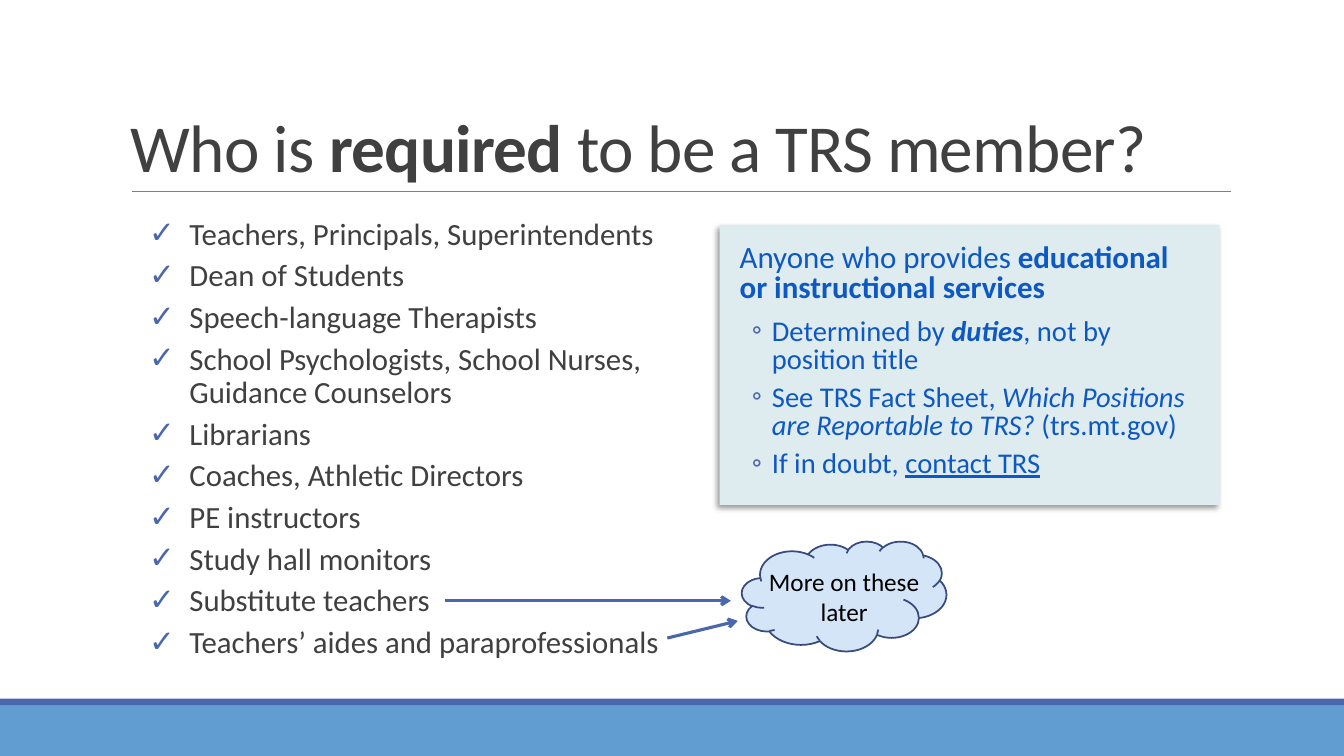
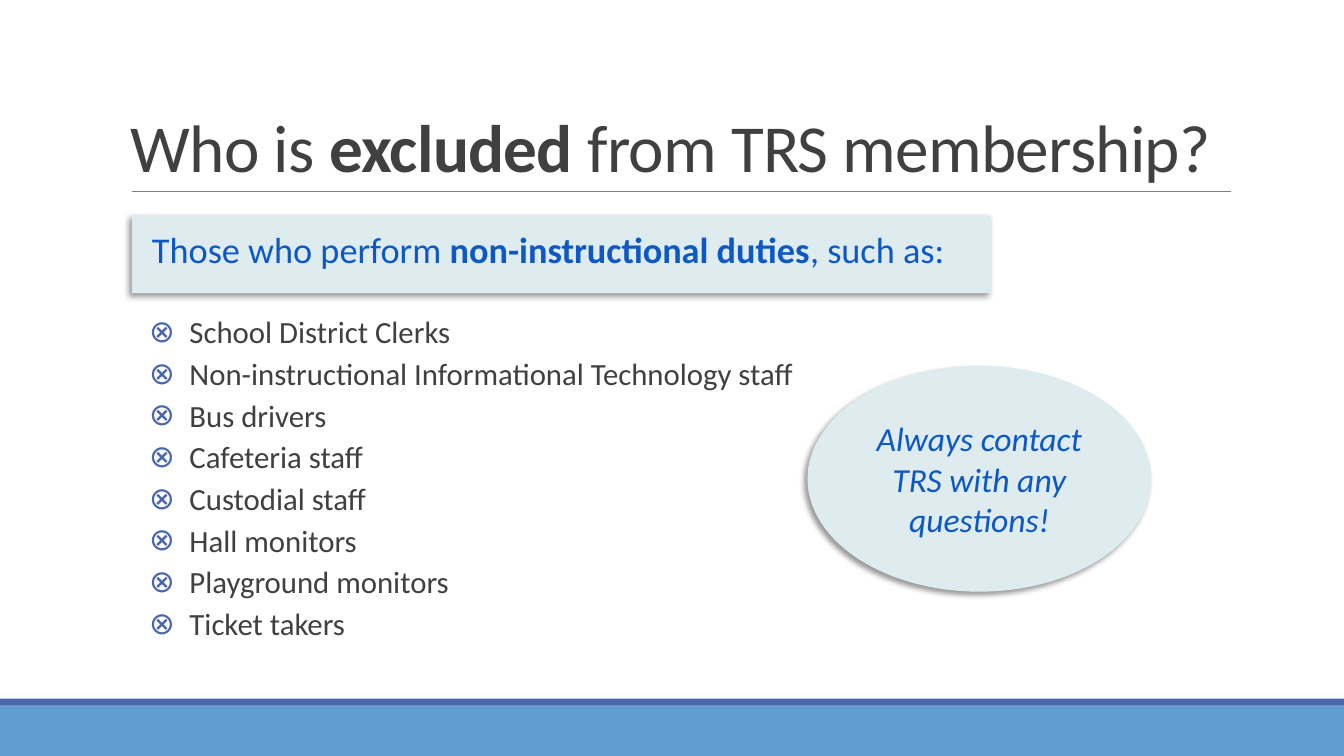
"""Build two slides on who must join TRS and who is excluded."""
from dataclasses import dataclass

from lxml import etree
from pptx import Presentation
from pptx.dml.color import RGBColor
from pptx.enum.shapes import MSO_CONNECTOR, MSO_SHAPE
from pptx.enum.text import MSO_ANCHOR, PP_ALIGN
from pptx.oxml.ns import qn
from pptx.shapes.autoshape import Shape
from pptx.slide import Slide
from pptx.text.text import TextFrame
from pptx.util import Inches, Pt

RECTANGLE, ELLIPSE, CLOUD = MSO_SHAPE.RECTANGLE, MSO_SHAPE.OVAL, MSO_SHAPE.CLOUD
STRAIGHT = MSO_CONNECTOR.STRAIGHT
TOP, MIDDLE, BOTTOM = MSO_ANCHOR.TOP, MSO_ANCHOR.MIDDLE, MSO_ANCHOR.BOTTOM
LEFT, CENTER = PP_ALIGN.LEFT, PP_ALIGN.CENTER

WIDTH, HEIGHT = Inches(13.333), Inches(7.5)
FONT = "Calibri"
BAND, ACCENT, RULE = "629DD1", "4A66AC", "808080"
INK, BLUE, BLACK = "404040", "0E58C4", "000000"
PANEL, CLOUD_FILL, CLOUD_LINE = "DEECEF", "D4E5F7", "374B7F"
PLAIN_INSETS = (0.1, 0.05, 0.1, 0.05)
PANEL_INSETS = (0.1, 0.2, 0.2, 0.2)
LIST_INSETS = (0, 0.05, 0, 0.05)


@dataclass(frozen=True)
class Area:
    """Rectangle in percent of the slide's width and height."""
    left: float
    top: float
    width: float
    height: float

    def emu(self) -> tuple[int, int, int, int]:
        """Return left, top, width and height in EMU."""
        return (across(self.left), down(self.top),
                across(self.width), down(self.height))


@dataclass(frozen=True)
class Line:
    """Straight line between two points in percent of the slide."""
    x1: float
    y1: float
    x2: float
    y2: float


@dataclass(frozen=True)
class Part:
    """Stretch of text in one style."""
    text: str
    bold: bool = False
    italic: bool = False
    underline: bool = False


TITLE = Area(9, 4.13, 82.5, 21.2)
TITLE_RULE = Line(9.82, 25.33, 91.58, 25.33)
BANDS = ((Area(0, 93.33, 100, 6.67), BAND), (Area(0, 92.4, 100, 0.93), ACCENT))
ARROWS = (Line(33.08, 79.47, 54.38, 79.47), Line(49.65, 84.4, 54.9, 82.13))
LATER = Area(55.2, 71.6, 15.22, 14.53)

REQUIRED = (
    "Teachers, Principals, Superintendents",
    "Dean of Students",
    "Speech-language Therapists",
    "School Psychologists, School Nurses, Guidance Counselors",
    "Librarians",
    "Coaches, Athletic Directors",
    "PE instructors",
    "Study hall monitors",
    "Substitute teachers",
    "Teachers’ aides and paraprofessionals",
)
EXCLUDED = (
    "School District Clerks",
    "Non-instructional Informational Technology staff",
    "Bus drivers",
    "Cafeteria staff",
    "Custodial staff",
    "Hall monitors",
    "Playground monitors",
    "Ticket takers",
)
ADVICE = (
    (Part("Determined by "), Part("duties", bold=True, italic=True),
     Part(", not by position title")),
    (Part("See TRS Fact Sheet, "),
     Part("Which Positions are Reportable to TRS? ", italic=True),
     Part("(trs.mt.gov)")),
    (Part("If in doubt, "), Part("contact TRS", underline=True)),
)


def across(percent: float) -> int:
    """Turn a share of the slide's width into EMU."""
    return round(WIDTH * percent / 100)


def down(percent: float) -> int:
    """Turn a share of the slide's height into EMU."""
    return round(HEIGHT * percent / 100)


def color(code: str) -> RGBColor:
    """Turn a hex string into a colour."""
    return RGBColor.from_string(code)


def child(parent: etree._Element, tag: str, **attributes: str) -> etree._Element:
    """Append an XML element to its parent."""
    return etree.SubElement(parent, qn(tag), attributes)


def prepare(frame: TextFrame, insets: tuple[float, float, float, float],
            anchor: MSO_ANCHOR = TOP) -> TextFrame:
    """Wrap a frame's text and set its insets in inches and its anchor."""
    (frame.margin_left, frame.margin_top,
     frame.margin_right, frame.margin_bottom) = map(Inches, insets)
    frame.vertical_anchor, frame.word_wrap = anchor, True
    return frame


def add_box(slide: Slide, area: Area, insets: tuple[float, float, float, float],
            anchor: MSO_ANCHOR = TOP) -> TextFrame:
    """Add a text box and return its frame."""
    return prepare(slide.shapes.add_textbox(*area.emu()).text_frame, insets, anchor)


def add_text(frame: TextFrame, *parts: Part, size: float, ink: str,
             align: PP_ALIGN = LEFT, leading: float = 1, before: float = 0,
             after: float = 0, bullet: str = "", indent: float = 0,
             hanging: float = 0, tracking: int = 0) -> None:
    """Add one paragraph of styled parts to a frame."""
    first = not frame.text
    paragraph = frame.paragraphs[0] if first else frame.add_paragraph()
    paragraph.alignment, paragraph.line_spacing = align, leading
    paragraph.space_before = Pt(0 if first else before)
    paragraph.space_after = Pt(after)
    properties = paragraph._p.get_or_add_pPr()
    properties.set("marL", str(Inches(indent)))
    properties.set("indent", str(-Inches(hanging)))
    if bullet:
        child(child(properties, "a:buClr"), "a:srgbClr", val=ACCENT)
        child(properties, "a:buFont", typeface=FONT)
        child(properties, "a:buChar", char=bullet)
    for part in parts:
        run = paragraph.add_run()
        run.text = part.text
        font = run.font
        font.name, font.size, font.color.rgb = FONT, Pt(size), color(ink)
        font.bold, font.italic, font.underline = part.bold, part.italic, part.underline
        if tracking:
            run._r.get_or_add_rPr().set("spc", str(tracking))


def add_filled(slide: Slide, kind: MSO_SHAPE, area: Area, fill: str) -> Shape:
    """Draw a filled shape without outline or shadow."""
    shape = slide.shapes.add_shape(kind, *area.emu())
    shape.shadow.inherit = False
    shape.fill.solid()
    shape.fill.fore_color.rgb = color(fill)
    shape.line.fill.background()
    return shape


def add_panel(slide: Slide, kind: MSO_SHAPE, area: Area) -> Shape:
    """Draw a pale panel with a soft shadow to its lower left."""
    panel = add_filled(slide, kind, area, PANEL)
    effects = panel._element.spPr.find(qn("a:effectLst"))
    shadow = child(effects, "a:outerShdw", blurRad=str(Pt(4)), dist=str(Pt(3)),
                   dir=str(135 * 60000), algn="tr", rotWithShape="0")
    child(child(shadow, "a:srgbClr", val=BLACK), "a:alpha", val="40000")
    return panel


def add_line(slide: Slide, line: Line, ink: str, weight: float,
             arrow: bool = False) -> None:
    """Draw a straight line, with an arrowhead at its end on request."""
    connector = slide.shapes.add_connector(
        STRAIGHT, across(line.x1), down(line.y1), across(line.x2), down(line.y2))
    connector.line.color.rgb = color(ink)
    connector.line.width = Pt(weight)
    if arrow:
        child(connector.line._get_or_add_ln(), "a:tailEnd", type="arrow")
    child(connector._element.spPr, "a:effectLst")


def add_list(slide: Slide, area: Area, items: tuple[str, ...], bullet: str) -> None:
    """Write a list with the given bullet."""
    frame = add_box(slide, area, LIST_INSETS)
    for item in items:
        add_text(frame, Part(item), size=22, ink=INK, leading=0.9, before=2,
                 after=4, bullet=bullet, indent=0.5, hanging=0.4)


def add_summary(slide: Slide, area: Area, *parts: Part, size: float,
                after: float) -> TextFrame:
    """Draw a panel that opens with a summary and return its frame."""
    frame = prepare(add_panel(slide, RECTANGLE, area).text_frame, PANEL_INSETS)
    add_text(frame, *parts, size=size, ink=BLUE, leading=0.8, after=after, indent=0.1)
    return frame


def add_base(deck: Presentation, *title: Part) -> Slide:
    """Add a slide with the shared bands, rule and title."""
    slide = deck.slides.add_slide(deck.slide_layouts[6])
    for area, fill in BANDS:
        add_filled(slide, RECTANGLE, area, fill)
    add_line(slide, TITLE_RULE, RULE, 0.5)
    add_text(add_box(slide, TITLE, PLAIN_INSETS, BOTTOM), *title,
             size=48, ink=INK, leading=0.85, tracking=-50)
    return slide


def build_required(deck: Presentation) -> None:
    """Build the slide on required members."""
    slide = add_base(deck, Part("Who is "), Part("required", bold=True),
                     Part(" to be a TRS member?"))
    add_list(slide, Area(10.35, 28.27, 42, 62.13), REQUIRED, "✓")
    duties = add_summary(slide, Area(53.55, 29.73, 37.2, 37.07),
                         Part("Anyone who provides "),
                         Part("educational or instructional services", bold=True),
                         size=22.1, after=9)
    for advice in ADVICE:
        add_text(duties, *advice, size=20.4, ink=BLUE, leading=0.8, before=2,
                 after=6, bullet="◦", indent=0.42, hanging=0.2)
    for arrow in ARROWS:
        add_line(slide, arrow, ACCENT, 2.25, arrow=True)
    cloud = add_filled(slide, CLOUD, LATER, CLOUD_FILL)
    cloud.line.color.rgb = color(CLOUD_LINE)
    cloud.line.width = Pt(1.25)
    add_text(add_box(slide, LATER, PLAIN_INSETS, MIDDLE),
             Part("More on these later"), size=18, ink=BLACK, align=CENTER)


def build_excluded(deck: Presentation) -> None:
    """Build the slide on excluded staff."""
    slide = add_base(deck, Part("Who is "), Part("excluded", bold=True),
                     Part(" from TRS membership?"))
    add_list(slide, Area(10.35, 41.33, 52.8, 46.13), EXCLUDED, "⊗")
    add_summary(slide, Area(9.82, 28.53, 63.9, 10.27),
                Part("Those who perform "),
                Part("non-instructional duties", bold=True), Part(", such as:"),
                size=25.9, after=12)
    reminder = add_panel(slide, ELLIPSE, Area(60.08, 48.4, 25.58, 29.87))
    add_text(prepare(reminder.text_frame, PLAIN_INSETS, MIDDLE),
             Part("Always contact TRS with any questions!", italic=True),
             size=24, ink=BLUE, align=CENTER)


def main() -> None:
    """Build and save the presentation."""
    deck = Presentation()
    deck.slide_width, deck.slide_height = WIDTH, HEIGHT
    build_required(deck)
    build_excluded(deck)
    deck.save("out.pptx")


if __name__ == "__main__":
    main()
